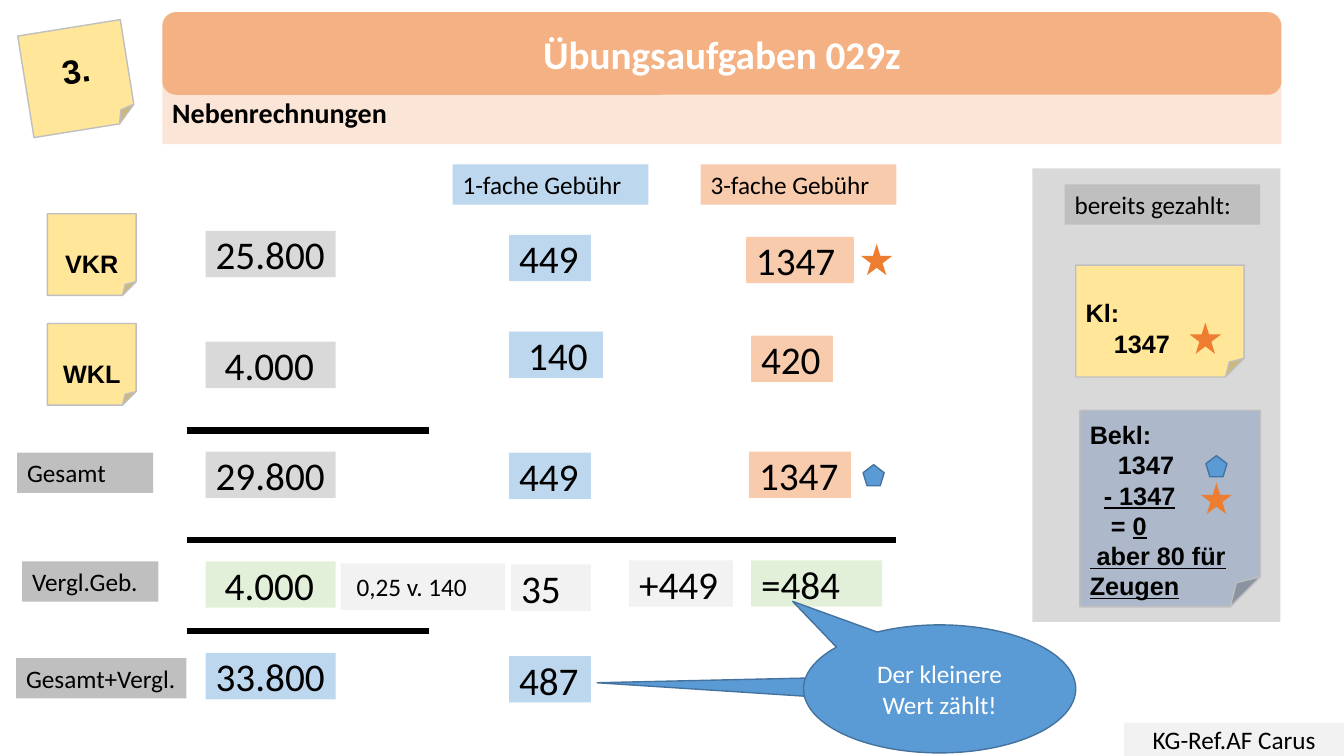
from dataclasses import dataclass

from lxml import etree
from pptx import Presentation
from pptx import util as u
from pptx.dml.color import RGBColor
from pptx.enum import shapes, text
from pptx.oxml.ns import qn

KIND = shapes.MSO_SHAPE
CENTER = text.PP_ALIGN.CENTER
LEFT = text.PP_ALIGN.LEFT
TOP = text.MSO_ANCHOR.TOP
MIDDLE = text.MSO_ANCHOR.MIDDLE


@dataclass(frozen=True)
class Theme:
    body: str = "Calibri"
    note: str = "Arial"
    small: int = 18
    subtitle: int = 20
    numeral: int = 24
    large: int = 28
    black: str = "000000"
    white: str = "FFFFFF"
    pale: str = "F2F2F2"
    light_gray: str = "D9D9D9"
    gray: str = "BFBFBF"
    slate: str = "ADB9CA"
    peach: str = "FBE5D6"
    apricot: str = "F4B183"
    salmon: str = "F8CBAD"
    orange: str = "ED7D31"
    yellow: str = "FFE699"
    green: str = "E2F0D9"
    sky: str = "BDD7EE"
    blue: str = "5B9BD5"
    navy: str = "43739E"


THEME = Theme()


@dataclass(frozen=True)
class Box:
    left: float
    top: float
    width: float
    height: float

    def inner(self, dx, dy, width, height):
        return Box(self.left + dx, self.top + dy, width, height)

    def lengths(self):
        return [u.Inches(n) for n in (self.left, self.top, self.width, self.height)]


def add_shape(parent, kind, box, fill, line=None):
    shape = parent.shapes.add_shape(kind, *box.lengths())
    shape.shadow.inherit = False
    shape.fill.solid()
    shape.fill.fore_color.rgb = RGBColor.from_string(fill)
    if line:
        shape.line.color.rgb = RGBColor.from_string(line)
        shape.line.width = u.Pt(1)
    else:
        shape.line.fill.background()
    return shape


def write(shape, lines, size, font=THEME.body, color=THEME.black, bold=False,
          align=LEFT, anchor=MIDDLE, top=0.05, bottom=0.05, indent=0):
    """Each line is a list of (text, underlined) runs with its own left indent."""
    frame = shape.text_frame
    frame.word_wrap = True
    frame.vertical_anchor = anchor
    frame.margin_top, frame.margin_bottom = u.Inches(top), u.Inches(bottom)
    if isinstance(lines, str):
        lines = [(indent, [(lines, False)])]
    for number, (line_indent, runs) in enumerate(lines):
        paragraph = frame.add_paragraph() if number else frame.paragraphs[0]
        paragraph.alignment = align
        if line_indent:
            paragraph._p.get_or_add_pPr().set("marL", str(u.Inches(line_indent)))
        paragraph.font.name, paragraph.font.size = font, u.Pt(size)
        paragraph.font.bold = bold
        paragraph.font.color.rgb = RGBColor.from_string(color)
        for words, underlined in runs:
            run = paragraph.add_run()
            run.text = words
            if underlined:
                run.font.underline = True


def add_label(parent, box, words, fill, size=THEME.small, **style):
    write(add_shape(parent, KIND.RECTANGLE, box, fill), words, size, **style)


def add_note(parent, box, lines, fill=THEME.yellow, size=THEME.small, **style):
    note = add_shape(parent, KIND.FOLDED_CORNER, box, fill, THEME.gray)
    write(note, lines, size, THEME.note, bold=True, **style)
    return note


def add_star(parent, box, dx, dy):
    add_shape(parent, KIND.STAR_5_POINT, box.inner(dx, dy, 0.31, 0.31), THEME.orange)


def add_pentagon(parent, box, dx, dy):
    add_shape(parent, KIND.REGULAR_PENTAGON, box.inner(dx, dy, 0.21, 0.21),
              THEME.blue, THEME.navy)


def add_rule(slide, box, dy, width):
    left, top = u.Inches(box.left), u.Inches(box.top + dy)
    rule = slide.shapes.add_connector(shapes.MSO_CONNECTOR.STRAIGHT, left, top,
                                      left + u.Inches(width), top)
    rule.line.color.rgb = RGBColor.from_string(THEME.black)
    rule.line.width = u.Pt(4.5)
    etree.SubElement(rule._element.spPr, qn("a:effectLst"))


def draw_header(slide, box):
    add_label(slide, box.inner(0, 0.67, box.width, 0.64), "Nebenrechnungen",
              THEME.peach, THEME.subtitle, bold=True)
    title = add_shape(slide, KIND.ROUNDED_RECTANGLE, box.inner(0, 0, box.width, 0.82),
                      THEME.apricot)
    write(title, "Übungsaufgaben 029z", THEME.large, color=THEME.white, bold=True,
          align=CENTER)
    number = add_note(slide, box.inner(-1.36, 0.15, 1.03, 1.02), "3.",
                      size=THEME.numeral, align=CENTER)
    number.rotation = 350.9


def draw_row_names(slide, box):
    for dy, name in ((0.49, "VKR"), (1.58, "WKL")):
        add_note(slide, box.inner(0.31, dy, 0.88, 0.81), name, align=CENTER,
                 top=0.32, bottom=0)
    for dx, dy, width, name in ((0.01, 2.86, 1.35, "Gesamt"),
                                (0.06, 3.94, 1.35, "Vergl.Geb."),
                                (0, 4.9, 1.69, "Gesamt+Vergl.")):
        add_label(slide, box.inner(dx, dy, width, 0.4), name, THEME.gray)


def draw_calculation(slide, box):
    # Column headings
    for dx, name, fill in ((2.64, "1-fache Gebühr", THEME.sky),
                           (5.1, "3-fache Gebühr", THEME.salmon)):
        add_label(slide, box.inner(dx, 0, 1.94, 0.4), name, fill)
    # Amounts: left, top, width, value, fill, indent
    amounts = (
        (0.19, 0.66, 1.29, "25.800", THEME.light_gray, 0),
        (3.2, 0.7, 0.81, "449", THEME.sky, 0),
        (5.55, 0.72, 1.07, "1347", THEME.salmon, 0),
        (0.19, 1.76, 1.29, "4.000", THEME.light_gray, 0.09),
        (3.2, 1.66, 0.93, "140", THEME.sky, 0.09),
        (5.6, 1.7, 0.81, "420", THEME.salmon, 0),
        (0.19, 2.85, 1.29, "29.800", THEME.light_gray, 0),
        (3.2, 2.86, 0.81, "449", THEME.sky, 0),
        (5.58, 2.85, 1.01, "1347", THEME.salmon, 0),
        (0.19, 3.94, 1.29, "4.000", THEME.green, 0.09),
        (3.22, 3.97, 0.79, "35", THEME.pale, 0),
        (4.39, 3.93, 1.03, "+449", THEME.pale, 0),
        (5.6, 3.93, 1.3, "=484", THEME.green, 0),
        (0.19, 4.85, 1.29, "33.800", THEME.sky, 0),
        (3.2, 4.88, 0.81, "487", THEME.sky, 0),
    )
    for dx, dy, width, value, fill, indent in amounts:
        add_label(slide, box.inner(dx, dy, width, 0.46), value, fill, THEME.large,
                  indent=indent)
    add_label(slide, box.inner(1.53, 3.96, 1.63, 0.46), "0,25 v. 140", THEME.pale,
              indent=0.06)
    # Sum lines and markers
    for dy, width in ((2.64, 2.4), (3.73, box.width), (4.63, 2.4)):
        add_rule(slide, box, dy, width)
    add_star(slide, box, 6.69, 0.79)
    add_pentagon(slide, box, 6.71, 2.98)


def draw_payments(slide, box):
    add_shape(slide, KIND.RECTANGLE, box, THEME.light_gray)
    add_label(slide, box.inner(0.32, 0.16, 1.94, 0.4), "bereits gezahlt:", THEME.gray)
    # Plaintiff
    plaintiff = slide.shapes.add_group_shape()
    note = box.inner(0.43, 0.96, 1.67, 1.11)
    add_note(plaintiff, note, [(0, [("Kl:", False)]), (0.28, [("1347", False)])],
             top=0.32, bottom=0)
    add_star(plaintiff, note, 1.13, 0.57)
    # Defendant
    defendant = slide.shapes.add_group_shape()
    note = box.inner(0.47, 2.4, 1.79, 1.95)
    lines = [(0, [("Bekl:", False)]),
             (0.28, [("1347", False)]),
             (0.14, [("- 1347", True)]),
             (0.21, [("= ", False), ("0", True)]),
             (0, [(" aber 80 für Zeugen", True)])]
    add_note(defendant, note, lines, THEME.slate, anchor=TOP, top=0.09, bottom=0)
    add_pentagon(defendant, note, 1.25, 0.45)
    add_star(defendant, note, 1.2, 0.72)


def draw_callout(slide, box):
    group = slide.shapes.add_group_shape()
    for bubble, tip in ((box.inner(0.19, 0.13, 2.32, 1.03), (-1.465, -0.069)),
                        (box, (-0.54, -0.684))):
        callout = add_shape(group, KIND.OVAL_CALLOUT, bubble, THEME.blue, THEME.navy)
        callout.adjustments[0], callout.adjustments[1] = tip
    write(callout, "Der kleinere Wert zählt!", THEME.small, color=THEME.white,
          align=CENTER)


def main():
    presentation = Presentation()
    presentation.slide_width = u.Inches(13.33)
    presentation.slide_height = u.Inches(7.5)
    slide = presentation.slides.add_slide(presentation.slide_layouts[6])
    draw_header(slide, Box(1.61, 0.12, 11.1, 1.31))
    draw_row_names(slide, Box(0.16, 1.63, 1.69, 5.3))
    draw_calculation(slide, Box(1.85, 1.63, 7.04, 5.34))
    draw_payments(slide, Box(10.24, 1.67, 2.46, 4.5))
    draw_callout(slide, Box(7.97, 6.2, 2.7, 1.27))
    # Footer
    add_label(slide, Box(11.15, 7.17, 2.18, 0.33), "KG-Ref.AF Carus", THEME.pale,
              align=CENTER)
    presentation.save("out.pptx")


if __name__ == "__main__":
    main()
